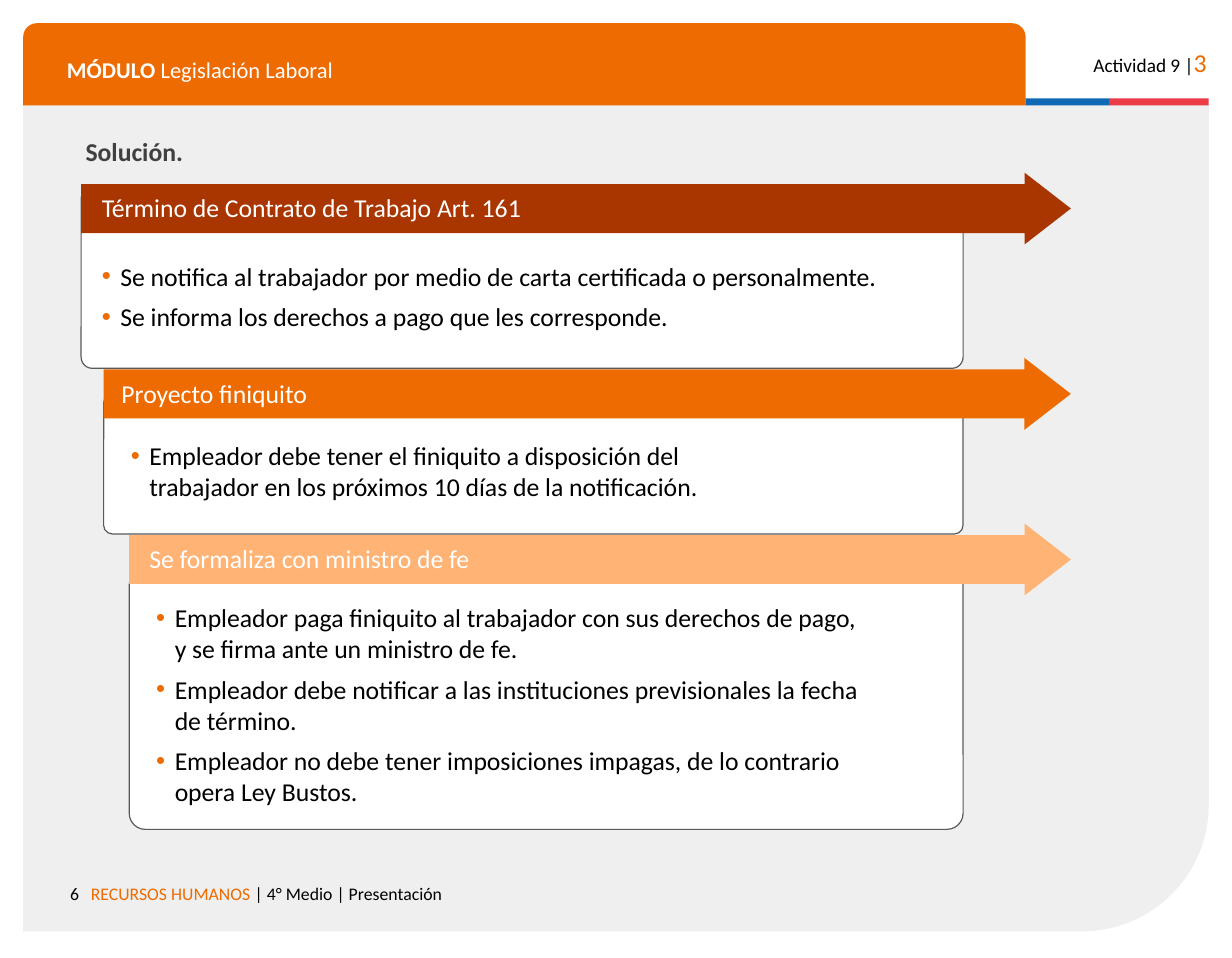
from lxml import etree
from pptx import Presentation
from pptx.dml.color import RGBColor
from pptx.enum.shapes import MSO_SHAPE
from pptx.enum.text import PP_ALIGN
from pptx.oxml.ns import qn
from pptx.util import Inches, Pt

RECT, ARROW = MSO_SHAPE.RECTANGLE, MSO_SHAPE.RIGHT_ARROW
CARD, TAB = MSO_SHAPE.ROUNDED_RECTANGLE, MSO_SHAPE.ROUND_2_SAME_RECTANGLE
PANEL = MSO_SHAPE.ROUND_1_RECTANGLE
LEFT, RIGHT = PP_ALIGN.LEFT, PP_ALIGN.RIGHT

WHITE = RGBColor(0xFF, 0xFF, 0xFF)
BLACK = RGBColor(0x00, 0x00, 0x00)
DARK = RGBColor(0x40, 0x40, 0x40)
BORDER = RGBColor(0x59, 0x59, 0x59)
GRAY = RGBColor(0xEF, 0xEF, 0xEF)
ORANGE = RGBColor(0xED, 0x6B, 0x00)
RUST = RGBColor(0xA9, 0x35, 0x01)
PEACH = RGBColor(0xFF, 0xB3, 0x75)
BLUE = RGBColor(0x0F, 0x69, 0xB4)
RED = RGBColor(0xEB, 0x3C, 0x46)

CELL = 0.1  # side of a grid square, in inches


def grid(*cells):
    return [Inches(n * CELL) for n in cells]


class Deck:
    """Holds the style and the current slide; lengths are grid columns and rows."""

    font = "Calibri"

    def __init__(self, cols, rows):
        self.prs = Presentation()
        self.prs.slide_width, self.prs.slide_height = grid(cols, rows)
        self.s = self.prs.slides.add_slide(self.prs.slide_layouts[6])

    def shape(self, kind, box, fill, adj=(), line=None, flip=False):
        sp = self.s.shapes.add_shape(kind, *grid(*box))
        sp.shadow.inherit = False
        for i, value in enumerate(adj):
            sp.adjustments[i] = value
        sp.fill.solid()
        sp.fill.fore_color.rgb = fill
        if line is None:
            sp.line.fill.background()
        else:
            sp.line.color.rgb = line
            sp.line.width = Pt(0.75)
        if flip:
            sp.element.spPr.find(qn("a:xfrm")).set("flipV", "1")

    def frame(self, box, pad=0.5):
        tf = self.s.shapes.add_textbox(*grid(*box)).text_frame
        tf.word_wrap = True
        tf.margin_top, tf.margin_bottom = grid(pad, pad)
        return tf

    def run(self, p, text, size, color, bold=False):
        r = p.add_run()
        r.text = text
        style = {"name": self.font, "size": Pt(size), "bold": bold}
        for name, value in style.items():
            setattr(r.font, name, value)
        r.font.color.rgb = color

    def text(self, box, *runs, align=LEFT, pad=0.5):
        p = self.frame(box, pad).paragraphs[0]
        p.alignment = align
        for r in runs:
            self.run(p, *r)

    def bullets(self, box, items):
        tf = self.frame(box)
        for i, item in enumerate(items):
            p = tf.add_paragraph() if i else tf.paragraphs[0]
            p.space_before = Pt(6)
            pPr = p._p.get_or_add_pPr()
            indent = Inches(0.16)
            pPr.set("marL", str(indent))
            pPr.set("indent", str(-indent))
            color = etree.SubElement(pPr, qn("a:buClr"))
            etree.SubElement(color, qn("a:srgbClr"), val=str(ORANGE))
            etree.SubElement(pPr, qn("a:buFont"), typeface="Arial")
            etree.SubElement(pPr, qn("a:buChar"), char="•")
            self.run(p, item, 16, BLACK)

    def step(self, left, top, color, card, title, title_left, body, items):
        card_top, card_height = card
        self.shape(CARD, (left, card_top, 83.1 - left, card_height), WHITE,
                   [0.062], BORDER)
        self.shape(ARROW, (left, top, 92.4 - left, 6.2), color, [0.682, 0.645])
        self.text((title_left, top + 1.2, 45, 3.7), (title, 16, WHITE))
        self.bullets(body, items)


STEPS = [
    (7, 14.9, RUST, (16.2, 15.6),
     "Término de Contrato de Trabajo Art. 161", 7.8, (7.8, 22, 73.3, 7.2),
     ["Se notifica al trabajador por medio de carta certificada o personalmente.",
      "Se informa los derechos a pago que les corresponde."]),
    (8.95, 30.9, ORANGE, (34, 12.1),
     "Proyecto finiquito", 9.5, (10.3, 37.5, 53.5, 6.4),
     ["Empleador debe tener el finiquito a disposición del trabajador "
      "en los próximos 10 días de la notificación."]),
    (11.15, 45.2, PEACH, (49.1, 22.5),
     "Se formaliza con ministro de fe", 11.9, (12.5, 51.5, 63.3, 18.8),
     ["Empleador paga finiquito al trabajador con sus derechos de pago, "
      "y se firma ante un ministro de fe.",
      "Empleador debe notificar a las instituciones previsionales "
      "la fecha de término.",
      "Empleador no debe tener imposiciones impagas, de lo contrario "
      "opera Ley Bustos."]),
]


def main():
    deck = Deck(106.3, 82.7)

    # Background panel, header tab and flag strip
    deck.shape(PANEL, (2, 9, 102.3, 71.4), GRAY, [0.153], flip=True)
    deck.shape(TAB, (2, 2, 86.5, 7.1), ORANGE, [0.167, 0])
    deck.shape(RECT, (88.5, 8.5, 7.2, 0.6), BLUE)
    deck.shape(RECT, (95.7, 8.5, 8.6, 0.6), RED)

    # Header and footer text
    deck.text((4.8, 3.8, 81.4, 3.5), ("MÓDULO ", 14, WHITE, True),
              ("Legislación Laboral", 14, WHITE), pad=1)
    deck.text((92.3, 3, 12.8, 3.8), ("Actividad 9 |", 12, BLACK),
              ("3", 16, ORANGE), align=RIGHT, pad=1)
    deck.text((2, 75.3, 5.8, 2.9), ("6", 11, BLACK), align=RIGHT, pad=1)
    deck.text((6.85, 75.3, 67.7, 3.8), ("RECURSOS HUMANOS ", 11, ORANGE),
              ("| 4° Medio | Presentación", 11, BLACK), pad=1)

    # Solution steps
    deck.text((6.4, 11.2, 12, 3.7), ("Solución.", 16, DARK, True))
    for step in STEPS:
        deck.step(*step)

    deck.prs.save("out.pptx")


if __name__ == "__main__":
    main()
